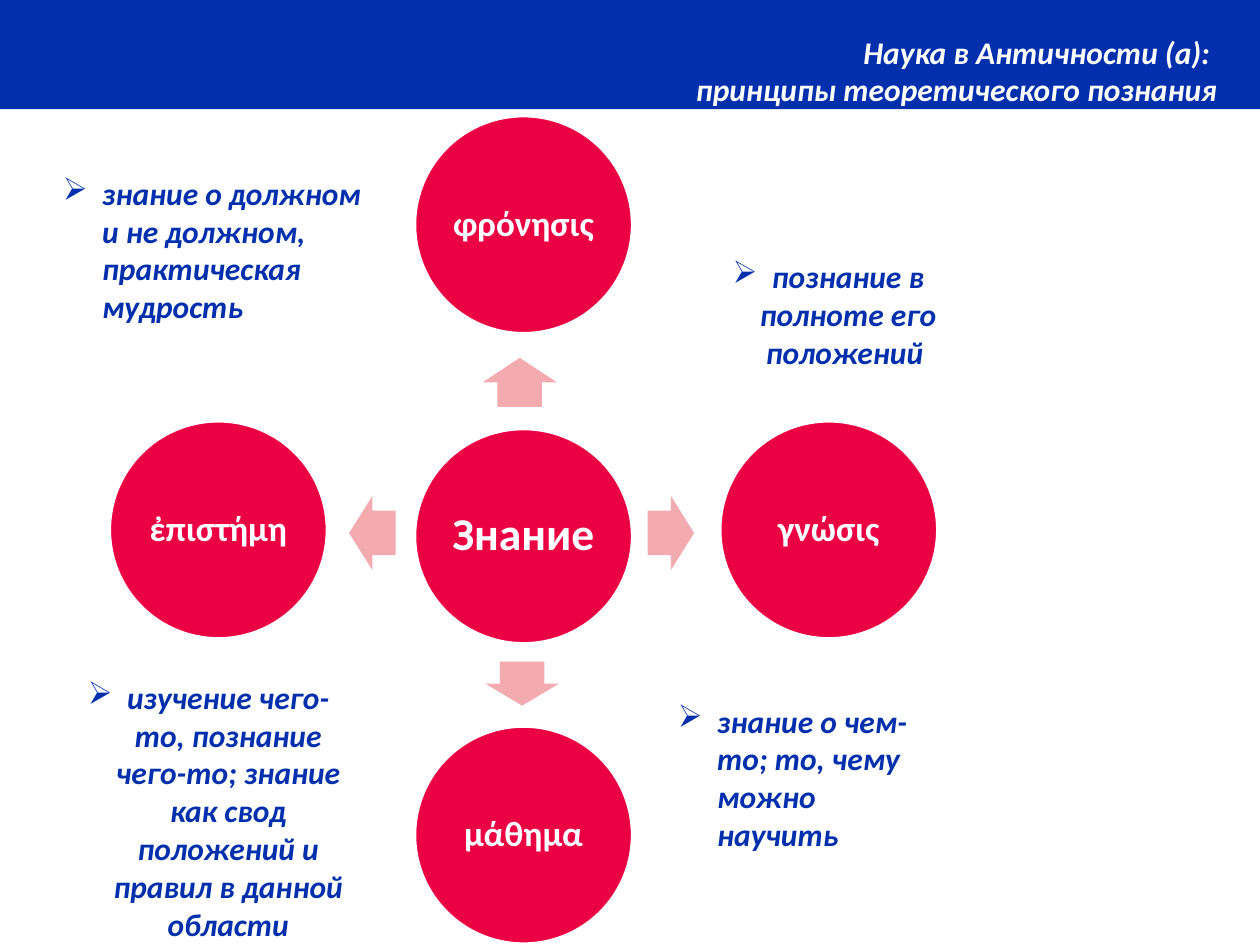
import pptx
import pptx.dml.color
import pptx.enum.shapes
import pptx.enum.text
import pptx.oxml
import pptx.oxml.ns
import pptx.util

Pt = pptx.util.Pt
Shape = pptx.enum.shapes.MSO_SHAPE
Align = pptx.enum.text.PP_ALIGN


def color(value):
    return pptx.dml.color.RGBColor.from_string(value)


class KnowledgeSlide:
    """Holds the style and the current slide, and draws its elements."""

    font = "Calibri"
    blue, red, pink, white = "0230AC", "EC0044", "F4ABB0", "FFFFFF"
    indent = 22.5

    def __init__(self, slide):
        self.slide = slide

    def add_text(self, paragraph, text, size, ink, italic=True):
        run = paragraph.add_run()
        run.text = text
        run.font.name = self.font
        run.font.size = Pt(size)
        run.font.bold = True
        run.font.italic = italic
        run.font.color.rgb = color(ink)

    def filled(self, kind, left, top, width, height, fill):
        shape = self.slide.shapes.add_shape(kind, Pt(left), Pt(top), Pt(width), Pt(height))
        shape.shadow.inherit = False
        shape.fill.solid()
        shape.fill.fore_color.rgb = color(fill)
        shape.line.fill.background()
        return shape

    def band(self, width, height):
        self.filled(Shape.RECTANGLE, 0, 0, width, height, self.blue)

    def circle(self, center_x, center_y, width, height, text, size):
        shape = self.filled(Shape.OVAL, center_x - width / 2, center_y - height / 2,
                            width, height, self.red)
        shape.line.color.rgb = color(self.white)
        shape.line.width = Pt(2)
        frame = shape.text_frame
        frame.word_wrap = False
        frame.vertical_anchor = pptx.enum.text.MSO_ANCHOR.MIDDLE
        paragraph = frame.paragraphs[0]
        paragraph.alignment = Align.CENTER
        paragraph.line_spacing = 0.9
        self.add_text(paragraph, text, size, self.white, italic=False)

    def arrow(self, kind, center_x, center_y, width, height):
        shape = self.filled(kind, center_x - width / 2, center_y - height / 2,
                            width, height, self.pink)
        shape.adjustments[0] = 0.6
        shape.adjustments[1] = 0.5

    def text_frame(self, left, top, width, height):
        box = self.slide.shapes.add_textbox(Pt(left), Pt(top), Pt(width), Pt(height))
        frame = box.text_frame
        frame.word_wrap = True
        frame.auto_size = pptx.enum.text.MSO_AUTO_SIZE.SHAPE_TO_FIT_TEXT
        return frame

    def title(self, left, top, width, height, lines):
        frame = self.text_frame(left, top, width, height)
        for index, line in enumerate(lines):
            paragraph = frame.add_paragraph() if index else frame.paragraphs[0]
            paragraph.alignment = Align.RIGHT
            self.add_text(paragraph, line, 18, self.white)

    def note(self, left, top, width, height, alignment, text):
        paragraph = self.text_frame(left, top, width, height).paragraphs[0]
        paragraph.alignment = alignment
        properties = paragraph._p.get_or_add_pPr()
        properties.set("marL", str(Pt(self.indent)))
        properties.set("indent", str(-Pt(self.indent)))
        bullet = pptx.oxml.parse_xml(
            f'<a:buChar {pptx.oxml.ns.nsdecls("a")} char="➢"/>')
        properties.append(bullet)
        self.add_text(paragraph, text, 18, self.blue)


def main():
    presentation = pptx.Presentation()
    presentation.slide_width = Pt(720)
    presentation.slide_height = Pt(540)
    page = KnowledgeSlide(presentation.slides.add_slide(presentation.slide_layouts[6]))

    page.band(720, 62.4)
    page.title(270.7, 15.1, 432, 51,
               ["Наука в Античности (а): ", "принципы теоретического познания"])

    center_x, center_y, step, diameter = 299.2, 302.8, 174.4, 124.6
    page.circle(center_x, 306.4, diameter, 123, "Знание", 26)

    for kind, x, y, width, height in [
        (Shape.UP_ARROW, 297, 218.5, 42.4, 28),
        (Shape.RIGHT_ARROW, 383.4, 304.6, 26.6, 42.4),
        (Shape.DOWN_ARROW, 298.4, 390.6, 42.4, 25.2),
        (Shape.LEFT_ARROW, 212.8, 304.6, 26.6, 42.4),
    ]:
        page.arrow(kind, x, y, width, height)

    for column, row, term, place, alignment, meaning in [
        (1, 0, "γνώσις", (398.9, 143.3, 149, 72.7), Align.CENTER,
         "познание в полноте его положений "),
        (-1, 0, "ἐπιστήμη", (28.8, 383.8, 180.7, 159.8), Align.CENTER,
         "изучение чего-то, познание чего-то; знание как свод положений и правил "
         "в данной области"),
        (0, -1, "φρόνησις", (28.8, 95.8, 189.4, 94.3), Align.LEFT,
         "знание о должном и не должном, практическая мудрость"),
        (0, 1, "μάθημα", (380.2, 397.4, 157.7, 94.3), Align.LEFT,
         "знание о чем-то; то, чему можно научить"),
    ]:
        page.circle(center_x + column * step, center_y + row * step,
                    diameter, diameter, term, 20)
        page.note(*place, alignment, meaning)

    presentation.save("out.pptx")


if __name__ == "__main__":
    main()
